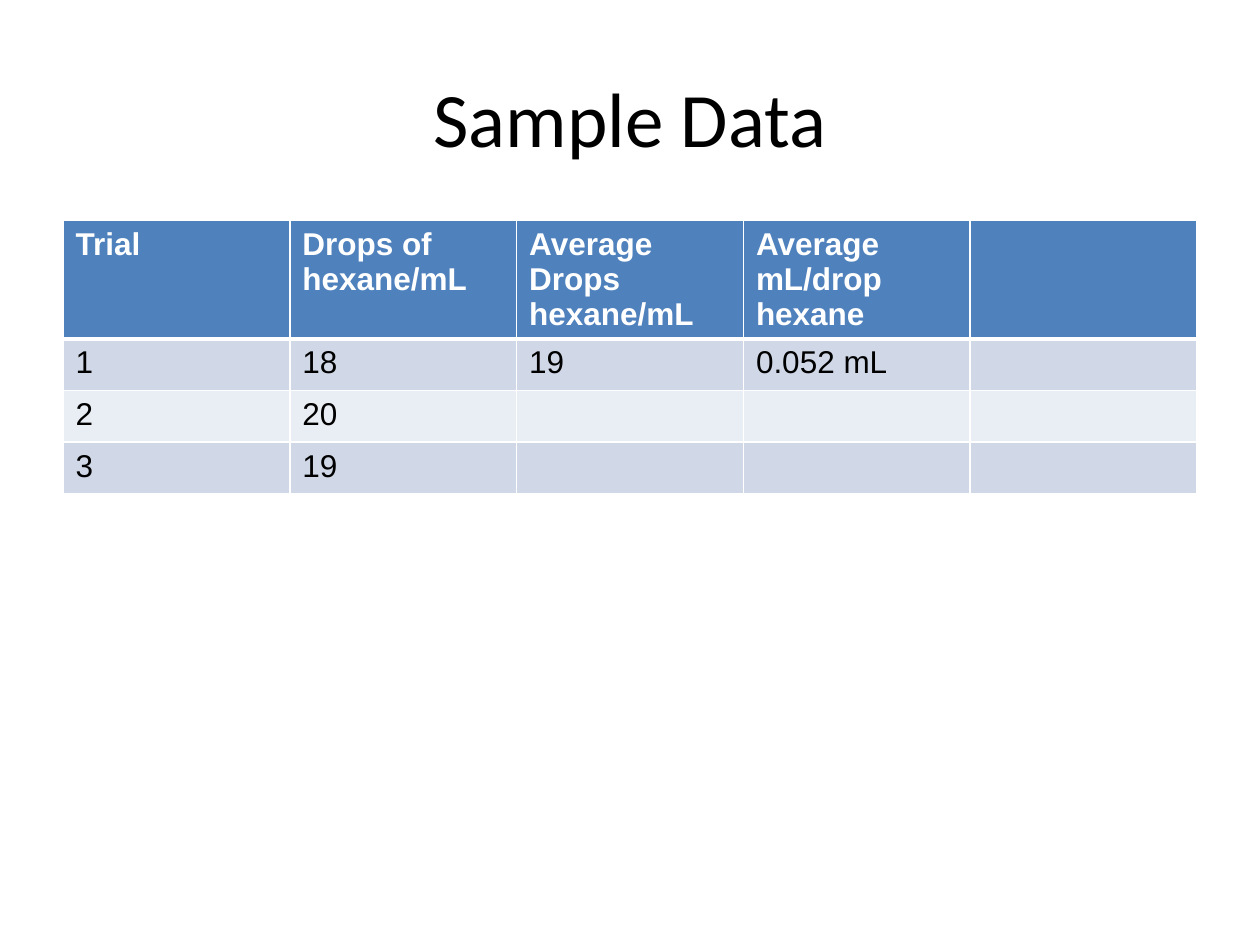
from dataclasses import dataclass

from lxml import etree
from pptx import Presentation
from pptx.dml.color import RGBColor
from pptx.enum.text import MSO_ANCHOR, PP_ALIGN
from pptx.oxml.ns import qn
from pptx.util import Inches, Pt

CENTER = PP_ALIGN.CENTER
LEFT = PP_ALIGN.LEFT
MIDDLE = MSO_ANCHOR.MIDDLE
TITLE_ONLY = 5


@dataclass(frozen=True)
class Theme:
    title_font: str = "Calibri"
    table_font: str = "Arial"
    title_size: int = 44
    table_size: int = 18
    ink: str = "000000"
    white: str = "FFFFFF"
    header_fill: str = "4F81BD"
    band_fills: tuple = ("D0D8E8", "E9EDF4")
    rule: int = 1
    header_rule: int = 3


def write_text(frame, text, *, font, size, color, bold=False, align=LEFT):
    para = frame.paragraphs[0]
    para.alignment = align
    span = para.add_run()
    span.text = text
    span.font.name = font
    span.font.size = Pt(size)
    span.font.bold = bold
    span.font.color.rgb = RGBColor.from_string(color)


class SlideBuilder:
    def __init__(self, page, theme):
        self.page = page
        self.theme = theme

    def title(self, text, left, top, width, height):
        box = self.page.shapes.title
        box.left, box.top = Inches(left), Inches(top)
        box.width, box.height = Inches(width), Inches(height)
        box.text_frame.vertical_anchor = MIDDLE
        write_text(box.text_frame, text, font=self.theme.title_font,
                   size=self.theme.title_size, color=self.theme.ink, align=CENTER)

    def border(self, cell, side, width):
        properties = cell._tc.get_or_add_tcPr()
        line = etree.SubElement(properties, qn(f"a:ln{side}"), w=str(Pt(width)))
        fill = etree.SubElement(line, qn("a:solidFill"))
        etree.SubElement(fill, qn("a:srgbClr"), val=self.theme.white)

    def cell(self, cell, text, row_index):
        theme = self.theme
        header = row_index == 0
        widths = {
            "L": theme.rule,
            "R": theme.rule,
            "T": theme.header_rule if row_index == 1 else theme.rule,
            "B": theme.header_rule if header else theme.rule,
        }
        for side, width in widths.items():
            self.border(cell, side, width)
        band = theme.band_fills[(row_index - 1) % len(theme.band_fills)]
        cell.fill.solid()
        cell.fill.fore_color.rgb = RGBColor.from_string(
            theme.header_fill if header else band)
        if text:
            write_text(cell.text_frame, text, font=theme.table_font,
                       size=theme.table_size, bold=header,
                       color=theme.white if header else theme.ink)

    def table(self, rows, left, top, width, header_height, row_height):
        heights = [header_height] + [row_height] * (len(rows) - 1)
        table = self.page.shapes.add_table(
            len(rows), len(rows[0]), Inches(left), Inches(top),
            Inches(width), Inches(sum(heights))).table
        for row_index, (values, height) in enumerate(zip(rows, heights)):
            table.rows[row_index].height = Inches(height)
            for column_index, text in enumerate(values):
                self.cell(table.cell(row_index, column_index), text, row_index)


def main():
    deck = Presentation()
    deck.slide_width, deck.slide_height = Inches(10), Inches(7.5)
    page = deck.slides.add_slide(deck.slide_layouts[TITLE_ONLY])
    builder = SlideBuilder(page, Theme())
    builder.title("Sample Data", 0.5, 0.3, 9, 1.25)
    trials = [
        ["Trial", "Drops of hexane/mL", "Average Drops hexane/mL",
         "Average mL/drop hexane", ""],
        ["1", "18", "19", "0.052 mL", ""],
        ["2", "20", "", "", ""],
        ["3", "19", "", "", ""],
    ]
    builder.table(trials, 0.5, 1.75, 9, header_height=0.93, row_height=0.41)
    deck.save("out.pptx")


if __name__ == "__main__":
    main()
